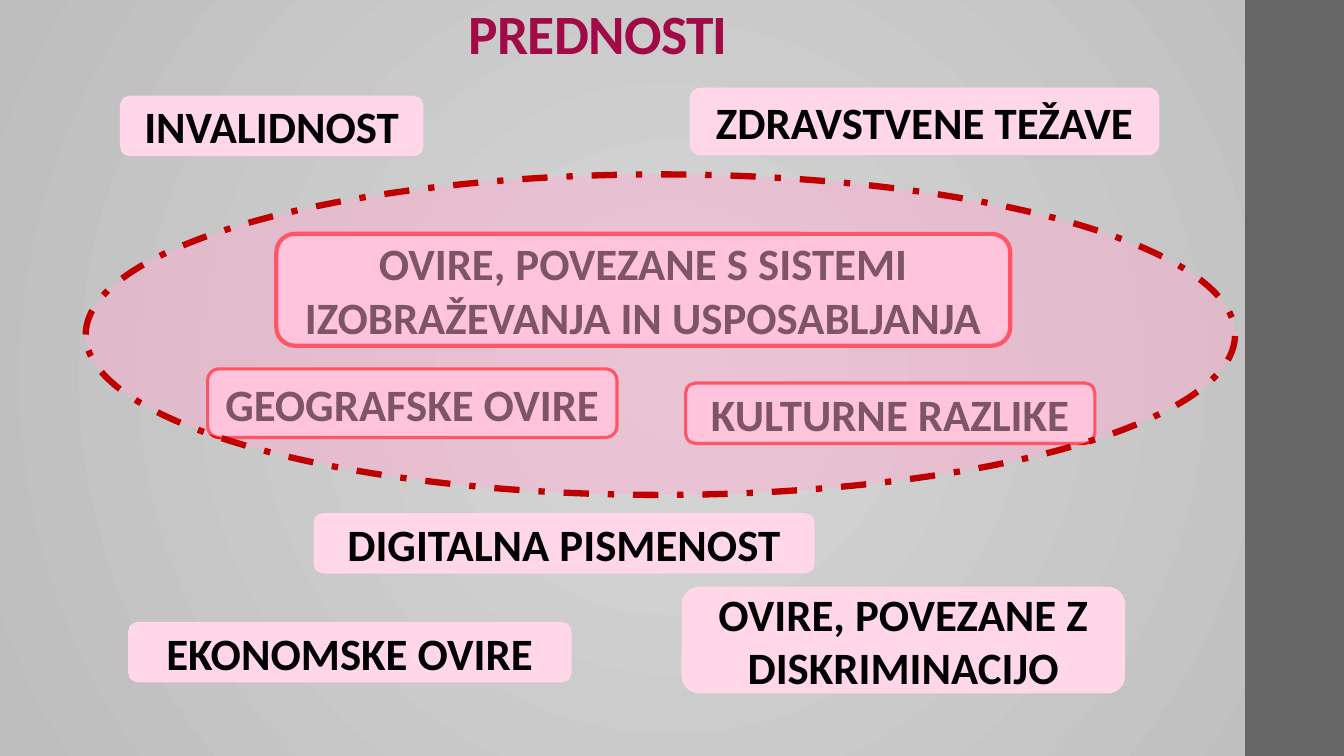
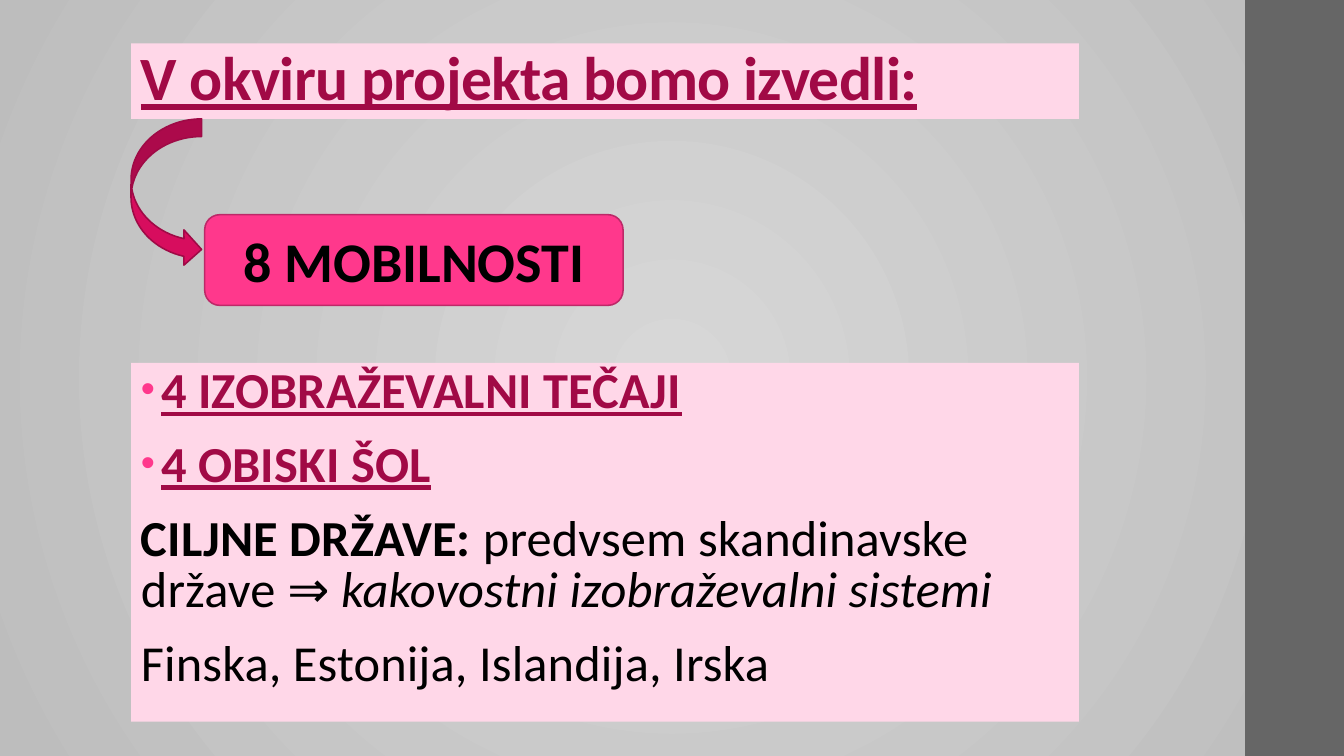
from lxml.etree import SubElement
from pptx import Presentation
from pptx.dml.color import RGBColor
from pptx.enum.dml import MSO_LINE
from pptx.enum.shapes import MSO_SHAPE as SHAPE
from pptx.enum.text import MSO_ANCHOR as ANCHOR, PP_ALIGN as ALIGN
from pptx.oxml.ns import qn
from pptx.util import Emu, Pt

FONT = "Calibri"
BLACK, WINE, PINK, HOT = "000000", "A10A46", "FFD7E8", "FF388C"
RED, DARK_RED, BAND = "FF0000", "C00000", "666666"


def px(n):
    return Emu(n * 9144)


def rgb(value):
    return RGBColor.from_string(value)


class Deck:
    """Holds the shared style and the current slide, and draws each kind of element."""

    def __init__(self):
        self.prs = Presentation()
        self.prs.slide_width, self.prs.slide_height = px(1333), px(750)
        self.background("D7D7D7", "BDBDBD")

    def background(self, inner, outer):
        master = self.prs.slide_master
        fill = master.background.fill
        fill.gradient()
        for stop, color, position in zip(fill.gradient_stops, (inner, outer), (0, 1)):
            stop.color.rgb, stop.position = rgb(color), position
        grad = master.element.find(".//" + qn("a:gradFill"))
        grad.remove(grad.find(qn("a:lin")))
        path = SubElement(grad, qn("a:path"), path="circle")
        SubElement(path, qn("a:fillToRect"), {side: "100000" for side in "ltrb"})

    def slide(self):
        self.s = self.prs.slides.add_slide(self.prs.slide_layouts[6])
        self.shape(SHAPE.RECTANGLE, (1235, 0, 100, 750), BAND)

    def shape(self, kind, box, fill, line=None, width=1.1, alpha=None, dash=None):
        sp = self.s.shapes.add_shape(kind, *map(px, box))
        sp.shadow.inherit = False
        sp.fill.solid()
        sp.fill.fore_color.rgb = rgb(fill)
        if alpha:
            color = sp.fill._xPr.find(".//" + qn("a:srgbClr"))
            SubElement(color, qn("a:alpha"), val=str(alpha * 1000))
        if line:
            sp.line.color.rgb, sp.line.width = rgb(line), Pt(width)
            sp.line.dash_style = dash
        else:
            sp.line.fill.background()
        return sp

    def label(self, text, box, fill=PINK, line=None, width=1.1, size=32):
        tf = self.shape(SHAPE.ROUNDED_RECTANGLE, box, fill, line, width).text_frame
        tf.vertical_anchor = ANCHOR.MIDDLE
        tf.text = text
        p = tf.paragraphs[0]
        p.alignment = ALIGN.CENTER
        self.font(p.runs[0], size, bold=True)

    def font(self, r, size, color=BLACK, bold=False, italic=False, underline=False, spacing=0):
        f = r.font
        f.name, f.size, f.color.rgb = FONT, Pt(size), rgb(color)
        f.bold, f.italic, f.underline = bold, italic, underline
        if spacing:
            f._element.set("spc", str(spacing))

    def textbox(self, box, fill=None):
        sp = self.s.shapes.add_textbox(*map(px, box))
        if fill:
            sp.fill.solid()
            sp.fill.fore_color.rgb = rgb(fill)
        tf = sp.text_frame
        tf.word_wrap = True
        return tf

    def title(self, text, box, size, fill=None, underline=False):
        tf = self.textbox(box, fill)
        tf.vertical_anchor, tf.margin_top = ANCHOR.BOTTOM, px(3)
        tf.text = text
        p = tf.paragraphs[0]
        p.line_spacing = 0.9
        self.font(p.runs[0], size, WINE, bold=True, underline=underline, spacing=-50)

    def body(self, box, paragraphs):
        tf = self.textbox(box, PINK)
        for i, (bullet, runs) in enumerate(paragraphs):
            p = tf.add_paragraph() if i else tf.paragraphs[0]
            p.line_spacing, p.space_before, p.space_after = 0.85, Pt(14), Pt(2)
            if bullet:
                self.bullet(p)
            for text, style in runs:
                r = p.add_run()
                r.text = text
                self.font(r, 36, spacing=10, **style)

    def bullet(self, p):
        pPr = p._p.get_or_add_pPr()
        pPr.set("marL", str(px(20)))
        pPr.set("indent", str(px(-20)))
        SubElement(SubElement(pPr, qn("a:buClr")), qn("a:srgbClr"), val=HOT)
        SubElement(pPr, qn("a:buSzPct"), val="80000")
        SubElement(pPr, qn("a:buFont"), typeface="Arial")
        SubElement(pPr, qn("a:buChar"), char="•")


def advantages(deck):
    deck.slide()
    deck.title("PREDNOSTI", (455, -20, 291, 91), 39.6)
    for text, box in (
        ("INVALIDNOST", (119, 95, 301, 60)),
        ("ZDRAVSTVENE TEŽAVE", (684, 87, 466, 67)),
        ("EKONOMSKE OVIRE", (127, 617, 440, 60)),
        ("OVIRE, POVEZANE Z DISKRIMINACIJO", (676, 582, 440, 106)),
        ("DIGITALNA PISMENOST", (311, 509, 497, 60)),
    ):
        deck.label(text, box)
    for text, box, width in (
        ("OVIRE, POVEZANE S SISTEMI IZOBRAŽEVANJA IN USPOSABLJANJA", (274, 232, 728, 111), 3),
        ("KULTURNE RAZLIKE", (680, 380, 406, 60), 2.25),
        ("GEOGRAFSKE OVIRE", (206, 366, 406, 68), 2.25),
    ):
        deck.label(text, box, line=RED, width=width)
    deck.shape(SHAPE.OVAL, (85, 173, 1140, 318), "FFAFD1", DARK_RED, 4.5,
               alpha=49, dash=MSO_LINE.DASH_DOT)


def activities(deck):
    deck.slide()
    deck.title("V okviru projekta bomo izvedli:", (130, 43, 940, 75), 44, PINK, underline=True)
    heading = dict(color=WINE, bold=True, underline=True)
    deck.body((130, 360, 940, 356), (
        (True, [("4 IZOBRAŽEVALNI TEČAJI", heading)]),
        (True, [("4 OBISKI ŠOL", heading)]),
        (False, [("CILJNE DRŽAVE:", dict(bold=True)),
                 (" predvsem skandinavske države ⇒ ", {}),
                 ("kakovostni izobraževalni sistemi", dict(italic=True))]),
        (False, [("Finska, Estonija, Islandija, Irska", {})]),
    ))
    deck.shape(SHAPE.CURVED_RIGHT_ARROW, (130, 118, 70, 147), "D70D5E", "9F0A46")
    deck.label("8 MOBILNOSTI", (203, 213, 415, 90), HOT, "BD2968", size=40)


def main():
    deck = Deck()
    advantages(deck)
    activities(deck)
    deck.prs.save("out.pptx")


if __name__ == "__main__":
    main()
